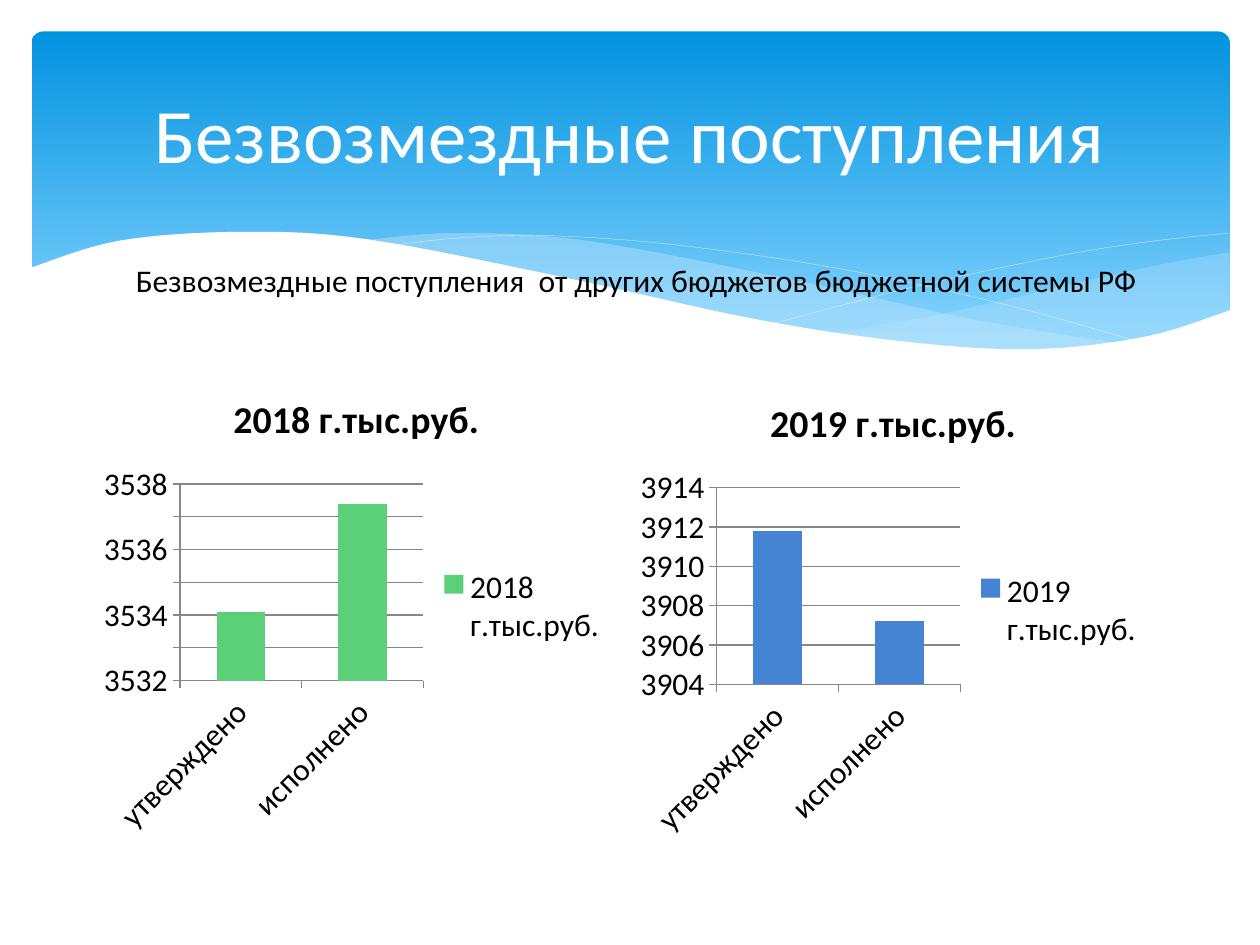
from lxml import etree
from pptx import Presentation
from pptx.chart.data import CategoryChartData
from pptx.dml.color import RGBColor
from pptx.enum.chart import XL_CHART_TYPE, XL_LEGEND_POSITION, XL_TICK_MARK
from pptx.enum.shapes import MSO_SHAPE
from pptx.enum.text import MSO_ANCHOR, PP_ALIGN
from pptx.oxml.ns import qn
from pptx.util import Inches, Pt

CLUSTERED = XL_CHART_TYPE.COLUMN_CLUSTERED
STACKED = XL_CHART_TYPE.COLUMN_STACKED
LEGEND_RIGHT = XL_LEGEND_POSITION.RIGHT
TICK_OUT = XL_TICK_MARK.OUTSIDE
ROUNDED = MSO_SHAPE.ROUNDED_RECTANGLE
TOP, MIDDLE = MSO_ANCHOR.TOP, MSO_ANCHOR.MIDDLE
LEFT, CENTER = PP_ALIGN.LEFT, PP_ALIGN.CENTER

WHITE = RGBColor(0xFF, 0xFF, 0xFF)
BLACK = RGBColor(0, 0, 0)
SKY_DARK = RGBColor(0x02, 0x93, 0xE0)
SKY_LIGHT = RGBColor(0x83, 0xD3, 0xFE)
PALE = RGBColor(0xC6, 0xE7, 0xFC)
GRAY = RGBColor(0x87, 0x87, 0x87)
GREEN = RGBColor(0x5B, 0xD0, 0x78)
BLUE = RGBColor(0x45, 0x84, 0xD3)
FONT = "Calibri"
CURVE_STEPS = 8


def smooth_curve(*knots):
    padded = [knots[0], *knots, knots[-1]]
    points = [knots[0]]
    for before, start, end, after in zip(padded, padded[1:], padded[2:], padded[3:]):
        for step in range(1, CURVE_STEPS + 1):
            t = step / CURVE_STEPS
            points.append(tuple(
                b + t * (c - a) / 2
                + t**2 * (2 * a - 5 * b + 4 * c - d) / 2
                + t**3 * (3 * b - a - 3 * c + d) / 2
                for a, b, c, d in zip(before, start, end, after)
            ))
    return points


def style_text(font, size, color, bold=False):
    for key, value in {"name": FONT, "size": Pt(size), "bold": bold}.items():
        setattr(font, key, value)
    font.color.rgb = color


deck = Presentation()
deck.slide_width, deck.slide_height = Inches(10), Inches(7.5)
page = deck.slides.add_slide(deck.slide_layouts[6])

banner = page.shapes.add_shape(ROUNDED, Inches(0.25), Inches(0.25), Inches(9.51), Inches(2.7))
banner.adjustments[0] = 0.034
banner.shadow.inherit = False
banner.line.fill.background()
banner.fill.gradient()
banner.fill.gradient_angle = 270
for stop, color, position in zip(banner.fill.gradient_stops, (SKY_DARK, SKY_LIGHT), (0, 0.9)):
    stop.color.rgb = color
    stop.position = position

right_top = smooth_curve((6.61, 2.65), (7.53, 2.48), (8.61, 2.23), (9.21, 2.1), (9.76, 2))
right_bottom = smooth_curve(
    (9.76, 2.47), (9.28, 2.63), (8.72, 2.74), (8.03, 2.78), (7.32, 2.74), (6.61, 2.65)
)
middle_top = smooth_curve(
    (2.86, 1.91), (3.61, 1.85), (4.65, 1.91), (6.29, 2.22), (7.75, 2.54), (8.93, 2.73)
)
middle_bottom = smooth_curve(
    (8.93, 2.73), (8.07, 2.78), (6.95, 2.7), (5.66, 2.48), (4.49, 2.22), (3.62, 2.03), (2.86, 1.91)
)
falling_line = smooth_curve(
    (3.09, 1.95), (3.63, 1.89), (4.33, 1.87), (5.33, 1.94), (6.65, 2.13), (7.95, 2.41), (9.07, 2.72)
)
rising_line = smooth_curve((6.13, 2.57), (7.2, 2.29), (8.36, 2.04), (9.1, 1.92), (9.75, 1.85))
white_crest = smooth_curve(
    (0.23, 2.13), (0.95, 1.91), (1.93, 1.84), (2.92, 1.9), (4.47, 2.2),
    (6.03, 2.54), (7.26, 2.72), (8.23, 2.77), (9.1, 2.67), (9.77, 2.46),
)
white_base = [(9.77, 3.29), (0.23, 3.29)]

for outline, color, opacity in (
    (right_top + right_bottom, PALE, 29),
    (middle_top + middle_bottom, PALE, 40),
    (falling_line, None, None),
    (rising_line, None, None),
    (white_crest + white_base, WHITE, 100),
):
    points = [(Inches(x), Inches(y)) for x, y in outline]
    builder = page.shapes.build_freeform(*points[0])
    builder.add_line_segments(points[1:], close=color is not None)
    wave = builder.convert_to_shape()
    wave.shadow.inherit = False
    if color is None:
        wave.fill.background()
        wave.line.color.rgb = WHITE
        wave.line.width = Pt(0.1)
        continue
    wave.line.fill.background()
    wave.fill.solid()
    wave.fill.fore_color.rgb = color
    if opacity < 100:
        tint = wave.fill._xPr.find(".//" + qn("a:srgbClr"))
        etree.SubElement(tint, qn("a:alpha")).set("val", str(opacity * 1000))

for year, kind, left, top, values, limits, unit, color in (
    (2018, CLUSTERED, 0.74, 2.93, (3534.1, 3537.4), (3532, 3538), 1, GREEN),
    (2019, STACKED, 5, 2.96, (3911.8, 3907.2), (3904, 3914), 2, BLUE),
):
    name = f"{year} г.тыс.руб."
    data = CategoryChartData()
    data.categories = ["утверждено", "исполнено"]
    data.add_series(name, values)
    frame = page.shapes.add_chart(
        kind, Inches(left), Inches(top), Inches(4.18), Inches(3.77), data
    )
    chart = frame.chart
    style_text(chart.font, 18, BLACK)
    chart.has_title = True
    chart.chart_title.text_frame.text = name
    span = chart.chart_title.text_frame.paragraphs[0].runs[0]
    style_text(span.font, 21.6, BLACK, bold=True)
    chart.has_legend = True
    chart.legend.position = LEGEND_RIGHT
    chart.legend.include_in_layout = False

    plot = chart.plots[0]
    plot.gap_width = 150
    plot.vary_by_categories = False
    if kind == STACKED:
        plot.overlap = 100
    bars = plot.series[0].format.fill
    bars.solid()
    bars.fore_color.rgb = color

    value_axis = chart.value_axis
    value_axis.minimum_scale, value_axis.maximum_scale = limits
    value_axis.major_unit = unit
    value_axis.has_major_gridlines = True
    value_axis.major_gridlines.format.line.color.rgb = GRAY
    for axis in (chart.category_axis, value_axis):
        axis.major_tick_mark = TICK_OUT
        axis.format.line.color.rgb = GRAY

for text, left, top, width, height, size, color, align, anchor in (
    ("Безвозмездные поступления", 0.5, 0.37, 9, 1.37, 44, WHITE, CENTER, MIDDLE),
    ("Безвозмездные поступления  от других бюджетов бюджетной системы РФ",
     0.98, 2.02, 9.26, 0.4, 18, BLACK, LEFT, TOP),
):
    box = page.shapes.add_textbox(Inches(left), Inches(top), Inches(width), Inches(height))
    box.text_frame.word_wrap = True
    box.text_frame.vertical_anchor = anchor
    para = box.text_frame.paragraphs[0]
    para.alignment = align
    span = para.add_run()
    span.text = text
    style_text(span.font, size, color)

deck.save("out.pptx")
